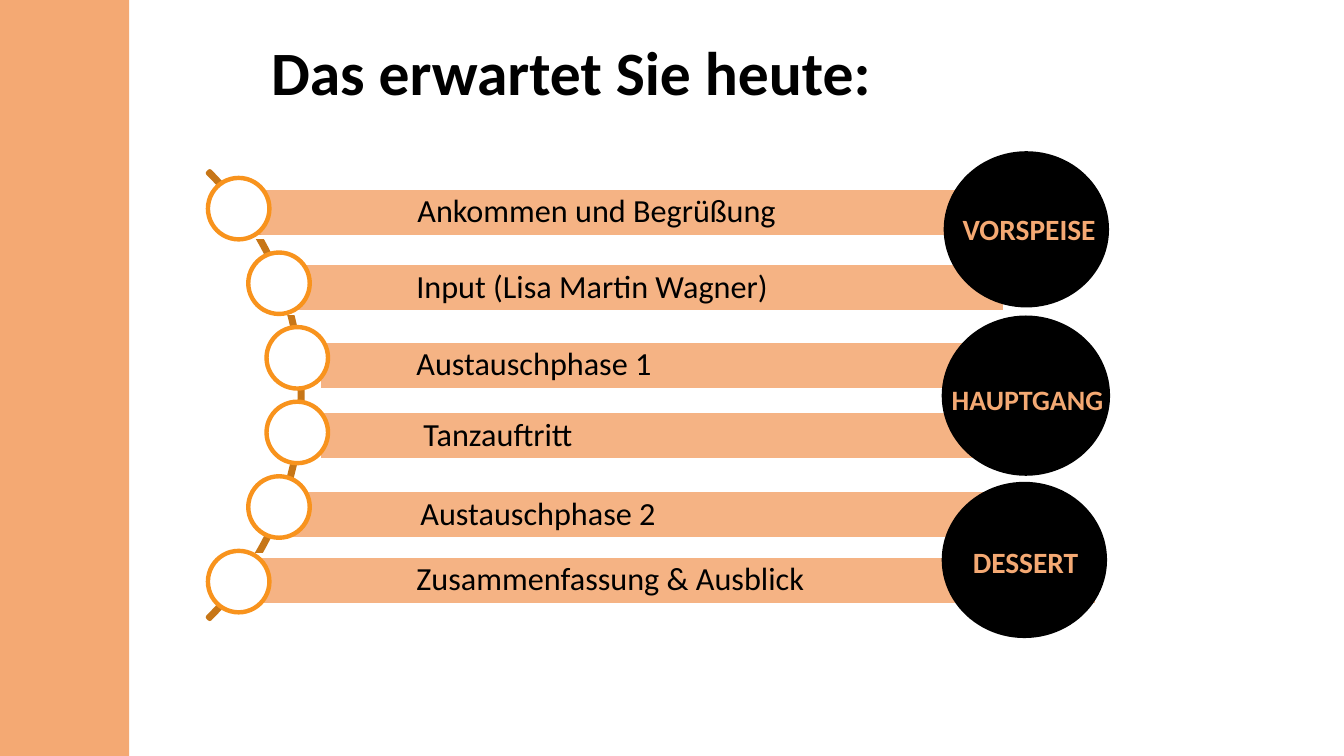
from math import sqrt

from lxml import etree
from pptx import Presentation
from pptx.dml.color import RGBColor
from pptx.enum.shapes import MSO_SHAPE as SHAPE
from pptx.enum.text import MSO_ANCHOR as ANCHOR
from pptx.oxml.ns import qn
from pptx.util import Inches, Pt

PEACH, ORANGE, BROWN = "F4A973", "F8931D", "C77617"
BLACK, WHITE = "000000", "FFFFFF"

AGENDA = [
    ("Ankommen und Begrüßung", 0.39, 1.08, 8.01, 2.08),
    ("Input (Lisa Martin Wagner)", 0.81, 1.83, 7.1, 2.07),
    ("Austauschphase 1", 1.1, 2.6, 7.58, 2.07),
    ("Tanzauftritt", 1.1, 3.3, 7.08, 2.14),
    ("Austauschphase 2", 0.78, 4.08, 7.55, 2.11),
    ("Zusammenfassung & Ausblick", 0.31, 4.73, 8.51, 2.07),
]
COURSES = [
    ("VORSPEISE", 0.02, 0, 1.64, 1.55, 0.11, 0.54, 21),
    ("HAUPTGANG", 0, 1.63, 1.67, 1.59, 0, 2.25, 20),
    ("DESSERT", 0, 3.28, 1.64, 1.55, 0.21, 3.85, 21),
]


def rgb(color):
    return RGBColor.from_string(color)


def add_form(slide, kind, left, top, width, height, fill=None, line=None, alpha=None):
    form = slide.shapes.add_shape(
        kind, Inches(left), Inches(top), Inches(width), Inches(height))
    form.shadow.inherit = False
    if fill:
        form.fill.solid()
        form.fill.fore_color.rgb = rgb(fill)
    else:
        form.fill.background()
    if alpha:
        tint = form.fill._xPr.find(qn("a:solidFill"))[0]
        etree.SubElement(tint, qn("a:alpha"), val=str(alpha * 1000))
    if line:
        form.line.color.rgb = rgb(line)
        form.line.width = Pt(3.15)
    else:
        form.line.fill.background()
    return form


def write(holder, text, size, color=BLACK, bold=False, anchor=ANCHOR.TOP,
          indent=0.1, padding=0.05, spacing=None):
    frame = holder.text_frame
    frame.word_wrap = True
    frame.vertical_anchor = anchor
    frame.margin_left = Inches(indent)
    frame.margin_right = frame.margin_top = frame.margin_bottom = Inches(padding)
    paragraph = frame.paragraphs[0]
    paragraph.alignment = 1
    paragraph.line_spacing = spacing
    run = paragraph.add_run()
    run.text = text
    run.font.name = "Calibri"
    run.font.size = Pt(size)
    run.font.bold = bold
    run.font.color.rgb = rgb(color)


def add_label(slide, left, top, width, height, text, size, **style):
    label = slide.shapes.add_textbox(
        Inches(left), Inches(top), Inches(width), Inches(height))
    write(label, text, size, **style)


def add_agenda(slide, left, top, height):
    radius = height / 2
    middle = top + radius
    center = left + 0.94 - radius
    arc = add_form(slide, SHAPE.BLOCK_ARC, center - radius, top, height, height,
                   line=BROWN)
    for index, value in enumerate((189, 27, 0.004)):
        arc.adjustments[index] = value

    ring, pitch = 0.61, 0.74
    for index, (topic, bar_x, bar_y, bar_width, text_x) in enumerate(AGENDA):
        bar = add_form(slide, SHAPE.RECTANGLE, left + bar_x, top + bar_y,
                       bar_width, 0.49, fill=PEACH, line=WHITE, alpha=88)
        write(bar, topic, 23, anchor=ANCHOR.MIDDLE, indent=text_x - bar_x,
              padding=0.06, spacing=0.9)
        rise = (index - (len(AGENDA) - 1) / 2) * pitch
        ring_x = center - 0.03 + sqrt(radius ** 2 - rise ** 2)
        add_form(slide, SHAPE.OVAL, ring_x - ring / 2, middle + rise - ring / 2,
                 ring, ring, fill=WHITE, line=ORANGE)


def add_courses(slide, left, top):
    for course, x, y, width, height, label_x, label_y, size in COURSES:
        add_form(slide, SHAPE.OVAL, left + x, top + y, width, height, fill=BLACK)
        add_label(slide, left + label_x, top + label_y, 2.27, 0.45, course, size,
                  color=PEACH, bold=True)


def main():
    deck = Presentation()
    deck.slide_width, deck.slide_height = Inches(13.33), Inches(7.5)
    slide = deck.slides.add_slide(deck.slide_layouts[6])
    add_form(slide, SHAPE.RECTANGLE, 0, 0, 1.28, 7.5, fill=PEACH)
    add_agenda(slide, 2.06, 0.78, 6.28)
    add_label(slide, 2.59, 0.33, 10.5, 0.84, "Das erwartet Sie heute:", 44,
              bold=True, anchor=ANCHOR.MIDDLE, spacing=0.9)
    add_courses(slide, 9.34, 1.5)
    deck.save("out.pptx")


if __name__ == "__main__":
    main()
